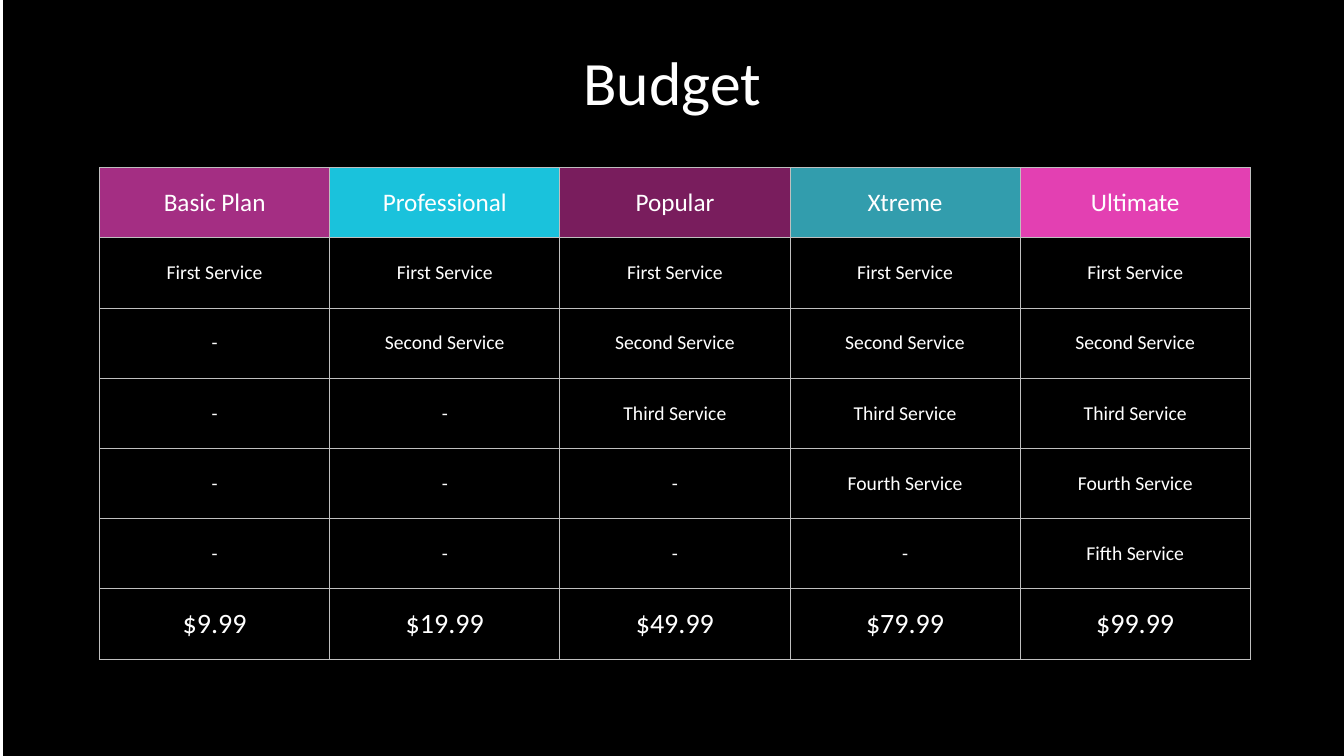
from lxml.etree import SubElement
from pptx import Presentation
from pptx.dml.color import RGBColor
from pptx.enum.shapes import MSO_SHAPE
from pptx.enum.text import MSO_ANCHOR, PP_ALIGN
from pptx.oxml.ns import qn
from pptx.util import Cm, Pt

BLACK = RGBColor(0x00, 0x00, 0x00)
WHITE = RGBColor(0xFF, 0xFF, 0xFF)
GRID = RGBColor(0xBF, 0xBF, 0xBF)
PLANS = [
    ("Basic Plan", "$9.99", RGBColor(0xA4, 0x2E, 0x83)),
    ("Professional", "$19.99", RGBColor(0x1A, 0xC2, 0xDC)),
    ("Popular", "$49.99", RGBColor(0x79, 0x1D, 0x5D)),
    ("Xtreme", "$79.99", RGBColor(0x32, 0x9D, 0xAD)),
    ("Ultimate", "$99.99", RGBColor(0xE3, 0x40, 0xB2)),
]
SERVICES = ["First", "Second", "Third", "Fourth", "Fifth"]
COL_WIDTH, ROW_HEIGHT = 5.8, 1.77


def write_centered(tf, text, size):
    tf.text = text
    tf.vertical_anchor = MSO_ANCHOR.MIDDLE
    p = tf.paragraphs[0]
    p.alignment = PP_ALIGN.CENTER
    font = p.runs[0].font
    font.name = "Calibri"
    font.size = Pt(size)
    font.color.rgb = WHITE
    return p


def add_borders(cell):
    tcPr = cell._tc.get_or_add_tcPr()
    for i, side in enumerate(("lnL", "lnR", "lnT", "lnB")):
        ln = SubElement(tcPr, qn(f"a:{side}"), w=str(Pt(0.75)))
        fill = SubElement(ln, qn("a:solidFill"))
        SubElement(fill, qn("a:srgbClr"), val=str(GRID))
        tcPr.insert(i, ln)  # borders come before the cell fill


prs = Presentation()
prs.slide_width, prs.slide_height = Cm(33.87), Cm(19.05)
s = prs.slides.add_slide(prs.slide_layouts[6])

backdrop = s.shapes.add_shape(
    MSO_SHAPE.RECTANGLE, Cm(0.08), 0, prs.slide_width, prs.slide_height)
backdrop.shadow.inherit = False
backdrop.fill.solid()
backdrop.fill.fore_color.rgb = BLACK
backdrop.line.fill.background()

rows, cols = len(SERVICES) + 2, len(PLANS)
table = s.shapes.add_table(
    rows, cols, Cm(2.51), Cm(4.22),
    Cm(COL_WIDTH * cols), Cm(ROW_HEIGHT * rows)).table
table.horz_banding = False
for column in table.columns:
    column.width = Cm(COL_WIDTH)
for row in table.rows:
    row.height = Cm(ROW_HEIGHT)

for c, (plan, price, color) in enumerate(PLANS):
    # Each plan includes one more service than the plan before it
    included = [f"{name} Service" if i <= c else "-"
                for i, name in enumerate(SERVICES)]
    for r, text in enumerate([plan, *included, price]):
        cell = table.cell(r, c)
        size = {0: 18, rows - 1: 20}.get(r, 14)
        write_centered(cell.text_frame, text, size)
        cell.vertical_anchor = MSO_ANCHOR.MIDDLE
        cell.margin_left = cell.margin_right = Cm(0.13)
        cell.margin_top = cell.margin_bottom = Cm(0.08)
        if r == 0:
            cell.fill.solid()
            cell.fill.fore_color.rgb = color
        else:
            cell.fill.background()
        add_borders(cell)

title = s.shapes.add_textbox(Cm(2.34), Cm(1.02), Cm(29.21), Cm(2.26))
title.text_frame.word_wrap = True
write_centered(title.text_frame, "Budget", 44).line_spacing = 0.9

prs.save("out.pptx")
